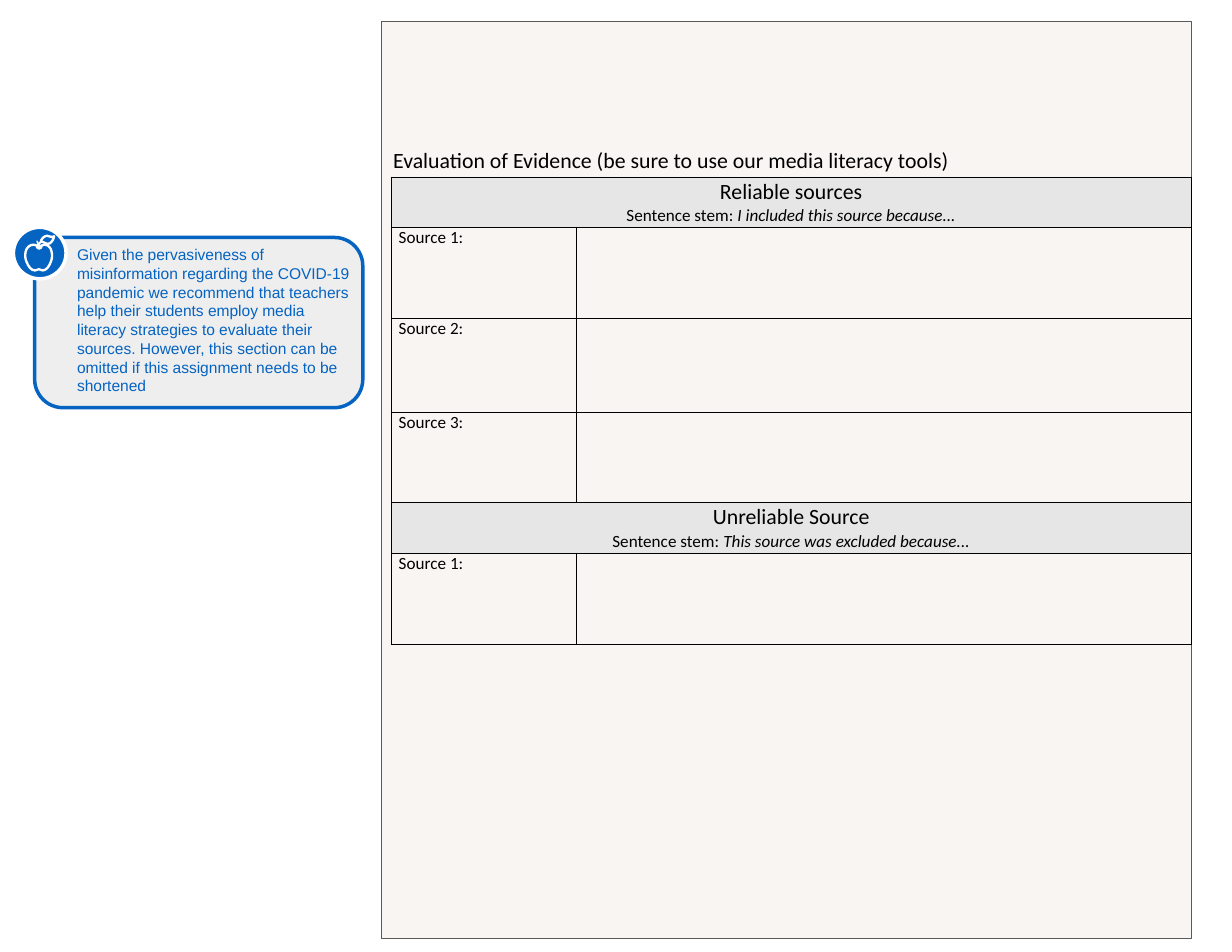
from lxml.etree import SubElement
from pptx import Presentation
from pptx.dml.color import RGBColor
from pptx.enum.shapes import MSO_SHAPE as Shape
from pptx.enum.text import MSO_ANCHOR as Anchor, MSO_AUTO_SIZE as AutoSize, PP_ALIGN as Align
from pptx.oxml.ns import qn
from pptx.util import Inches, Pt

BLACK = RGBColor(0x00, 0x00, 0x00)
WHITE = RGBColor(0xFF, 0xFF, 0xFF)
CREAM = RGBColor(0xF9, 0xF5, 0xF2)
DARK_GRAY = RGBColor(0x59, 0x59, 0x59)
HEADER_GRAY = RGBColor(0xE7, 0xE6, 0xE6)
NOTE_GRAY = RGBColor(0xEE, 0xEE, 0xEE)
BLUE = RGBColor(0x05, 0x63, 0xC1)

HEADING = "Evaluation of Evidence (be sure to use our media literacy tools)"
NOTE = (
    "Given the pervasiveness of misinformation regarding the COVID-19 pandemic "
    "we recommend that teachers help their students employ media literacy "
    "strategies to evaluate their sources. However, this section can be omitted "
    "if this assignment needs to be shortened"
)
# Each section: title, sentence stem, height of each source row
SECTIONS = [
    ("Reliable sources", "I included this source because...", [0.81, 0.84, 0.81]),
    ("Unreliable Source", "This source was excluded because...", [0.81]),
]
HEADER_HEIGHT = 0.45
COLUMN_WIDTHS = [1.66, 5.49]

# Apple outlines in thousandths of an inch from the badge corner
APPLE_BODY = [
    (180, 155), (160, 158), (143, 167), (128, 180), (116, 198), (108, 222),
    (105, 250), (108, 280), (117, 308), (130, 335), (147, 361), (168, 379),
    (190, 385), (208, 381), (228, 374), (246, 381), (264, 385), (285, 378),
    (305, 361), (322, 335), (334, 308), (343, 280), (345, 250), (342, 222),
    (334, 195), (322, 177), (304, 161), (280, 155), (258, 160), (238, 170),
    (216, 169), (200, 160),
]
APPLE_STEM = [
    (210, 122), (223, 145), (245, 126), (228, 165), (240, 178), (256, 173),
    (250, 186), (230, 195), (212, 187), (204, 174), (217, 178), (217, 150),
]
APPLE_LEAF = [
    (245, 126), (252, 108), (267, 90), (285, 79), (302, 75), (325, 82),
    (345, 86), (364, 80), (357, 103), (344, 126), (325, 143), (305, 147),
    (285, 141), (268, 132),
]


def add_span(para, text, size=11, font="Calibri", color=BLACK, italic=False):
    span = para.add_run()
    span.text = text
    span.font.size = Pt(size)
    span.font.name = font
    span.font.color.rgb = color
    span.font.italic = italic
    span.font.bold = False


def set_insets(frame, left, top, right, bottom):
    frame.margin_left, frame.margin_top = Inches(left), Inches(top)
    frame.margin_right, frame.margin_bottom = Inches(right), Inches(bottom)


def style_shape(shape, fill, line, weight):
    if fill is None:
        shape.fill.background()
    else:
        shape.fill.solid()
        shape.fill.fore_color.rgb = fill
    shape.line.color.rgb = line
    shape.line.width = Pt(weight)


def place_panel(title, left, top, width, height):
    """Worksheet panel, with the heading as its text."""
    title.left, title.top = Inches(left), Inches(top)
    title.width, title.height = Inches(width), Inches(height)
    style_shape(title, CREAM, DARK_GRAY, 0.75)
    frame = title.text_frame
    frame.word_wrap = True
    frame.auto_size = AutoSize.NONE
    frame.vertical_anchor = Anchor.TOP
    set_insets(frame, 0.1, 1.12, 0.1, 0.1)
    para = frame.paragraphs[0]
    para.alignment = Align.LEFT
    add_span(para, HEADING, size=14)


def format_cell(cell, fill=None):
    cell.margin_left = cell.margin_right = Inches(0.07)
    cell.margin_top = cell.margin_bottom = 0
    properties = cell._tc.get_or_add_tcPr()
    for side in ("lnL", "lnR", "lnT", "lnB"):
        border = SubElement(properties, qn(f"a:{side}"), w=str(Pt(0.5)))
        paint = SubElement(border, qn("a:solidFill"))
        SubElement(paint, qn("a:srgbClr"), val=str(BLACK))
    if fill is None:
        cell.fill.background()
    else:
        cell.fill.solid()
        cell.fill.fore_color.rgb = fill


def fill_section_header(cell, name, stem):
    cell.vertical_anchor = Anchor.MIDDLE
    title_para = cell.text_frame.paragraphs[0]
    stem_para = cell.text_frame.add_paragraph()
    title_para.alignment = stem_para.alignment = Align.CENTER
    add_span(title_para, name, size=14)
    add_span(stem_para, "Sentence stem: ")
    add_span(stem_para, stem, italic=True)


def add_source_table(page, left, top):
    heights = [h for _, _, rows in SECTIONS for h in [HEADER_HEIGHT, *rows]]
    frame = page.shapes.add_table(
        len(heights), len(COLUMN_WIDTHS), Inches(left), Inches(top),
        Inches(sum(COLUMN_WIDTHS)), Inches(sum(heights)))
    table = frame.table
    table.first_row = table.horz_banding = False
    for column, width in zip(table.columns, COLUMN_WIDTHS):
        column.width = Inches(width)
    for row, height in zip(table.rows, heights):
        row.height = Inches(height)

    row_index = 0
    for name, stem, source_heights in SECTIONS:
        # Section header across both columns
        header = table.cell(row_index, 0)
        header.merge(table.cell(row_index, 1))
        for cell in table.rows[row_index].cells:
            format_cell(cell, HEADER_GRAY)
        fill_section_header(header, name, stem)
        # One row for each source
        for number in range(1, len(source_heights) + 1):
            for cell in table.rows[row_index + number].cells:
                format_cell(cell)
            label = table.cell(row_index + number, 0)
            add_span(label.text_frame.paragraphs[0], f"Source {number}:")
        row_index += 1 + len(source_heights)


def add_teacher_note(page, left, top, width, height):
    card = page.shapes.add_shape(
        Shape.ROUNDED_RECTANGLE, Inches(left), Inches(top), Inches(width), Inches(height))
    card.shadow.inherit = False
    style_shape(card, NOTE_GRAY, BLUE, 2.25)
    box = page.shapes.add_textbox(
        Inches(left + 0.28), Inches(top - 0.03), Inches(width - 0.27), Inches(height + 0.03))
    box.text_frame.word_wrap = True
    set_insets(box.text_frame, 0.1, 0.1, 0.1, 0.1)
    add_span(box.text_frame.paragraphs[0], NOTE, size=10, font="Arial", color=BLUE)


def add_apple_badge(page, left, top, width, height):
    badge = page.shapes.add_group_shape()
    disc = badge.shapes.add_shape(
        Shape.OVAL, Inches(left), Inches(top), Inches(width), Inches(height))
    disc.shadow.inherit = False
    style_shape(disc, BLUE, WHITE, 2.25)
    parts = [(APPLE_BODY, None, 1.5), (APPLE_STEM, WHITE, 0.75), (APPLE_LEAF, None, 1.5)]
    for points, fill, weight in parts:
        builder = badge.shapes.build_freeform(*points[0], scale=Inches(1) / 1000)
        builder.add_line_segments(points[1:], close=True)
        outline = builder.convert_to_shape(Inches(left), Inches(top))
        outline.shadow.inherit = False
        style_shape(outline, fill, WHITE, weight)


def main():
    deck = Presentation()
    deck.slide_width, deck.slide_height = Inches(11), Inches(8.5)
    page = deck.slides.add_slide(deck.slide_layouts[5])
    place_panel(page.shapes.title, 3.41, 0.19, 7.23, 8.19)
    add_source_table(page, 3.49, 1.58)
    add_teacher_note(page, 0.31, 2.12, 2.93, 1.52)
    add_apple_badge(page, 0.12, 2.03, 0.47, 0.46)
    deck.save("out.pptx")


if __name__ == "__main__":
    main()
